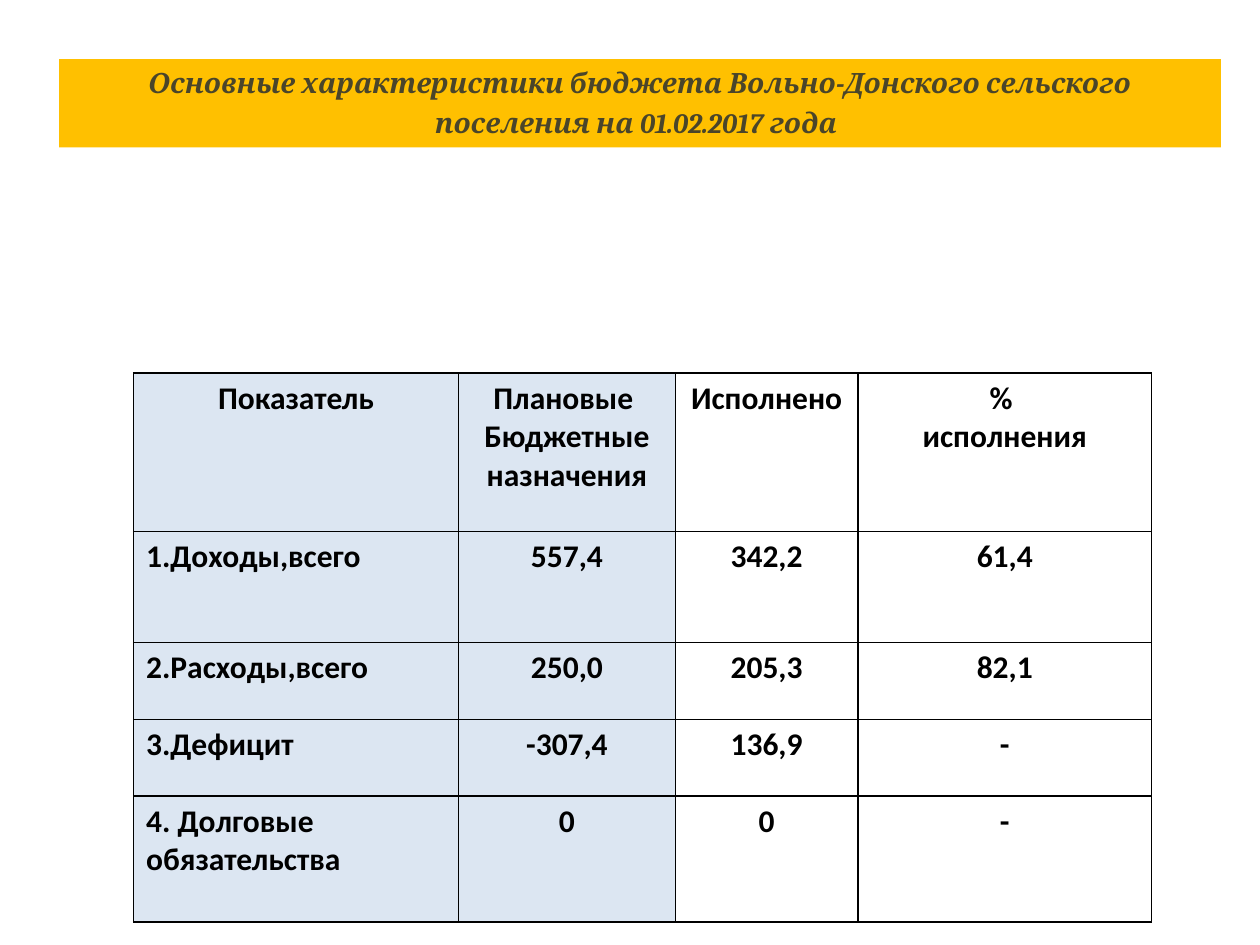
from lxml import etree
from pptx import Presentation
from pptx.dml.color import RGBColor
from pptx.enum.text import MSO_ANCHOR as Anchor, PP_ALIGN as Align
from pptx.enum.shapes import MSO_SHAPE as Shape
from pptx.oxml.ns import qn
from pptx.util import Inches, Pt

GOLD = RGBColor(0xFF, 0xC0, 0x00)
OLIVE = RGBColor(0x4A, 0x45, 0x2A)
PALE_BLUE = RGBColor(0xDC, 0xE6, 0xF2)
BLACK = RGBColor(0, 0, 0)

COLUMN_WIDTHS = [2.58, 1.72, 1.45, 2.33]
ROW_HEIGHTS = [1.26, 0.88, 0.61, 0.61, 1.0]
BUDGET = [
    ["Показатель", "Плановые \nБюджетные назначения", "Исполнено", "% \nисполнения"],
    ["1.Доходы,всего", "557,4", "342,2", "61,4"],
    ["2.Расходы,всего", "250,0", "205,3", "82,1"],
    ["3.Дефицит", "-307,4", "136,9", "-"],
    ["4. Долговые обязательства", "0", "0", "-"],
]


def add_span(para, text, size=18, font="Calibri", color=BLACK, bold=True, italic=False):
    span = para.add_run()
    span.text = text
    span.font.size = Pt(size)
    span.font.name = font
    span.font.color.rgb = color
    span.font.bold = bold
    span.font.italic = italic


class BudgetSlide:
    def __init__(self, page):
        self.page = page
        self.title_style = dict(font="Cambria", color=OLIVE, italic=True)
        self.shaded_columns = 2

    def banner(self, text, left, top, width, height):
        box = self.page.shapes.add_shape(
            Shape.RECTANGLE, Inches(left), Inches(top), Inches(width), Inches(height))
        box.shadow.inherit = False
        box.fill.solid()
        box.fill.fore_color.rgb = GOLD
        box.line.fill.background()
        frame = box.text_frame
        frame.word_wrap = True
        frame.vertical_anchor = Anchor.TOP
        para = frame.paragraphs[0]
        para.alignment = Align.CENTER
        add_span(para, text, size=16, **self.title_style)
        add_span(para, " ", size=20, **self.title_style)

    def table(self, rows, left, top, widths, heights):
        table = self.page.shapes.add_table(
            len(rows), len(widths), Inches(left), Inches(top),
            Inches(sum(widths)), Inches(sum(heights))).table
        table.first_row = False
        table.horz_banding = False
        for column, width in zip(table.columns, widths):
            column.width = Inches(width)
        for row, height in zip(table.rows, heights):
            row.height = Inches(height)
        for r, texts in enumerate(rows):
            for c, text in enumerate(texts):
                centred = r == 0 or c > 0
                self.cell(table.cell(r, c), text, centred, c < self.shaded_columns)

    def cell(self, cell, text, centred, shaded):
        for index, line in enumerate(text.split("\n")):
            frame = cell.text_frame
            para = frame.add_paragraph() if index else frame.paragraphs[0]
            para.alignment = Align.CENTER if centred else Align.LEFT
            add_span(para, line)
        self.borders(cell)
        if shaded:
            cell.fill.solid()
            cell.fill.fore_color.rgb = PALE_BLUE
        else:
            cell.fill.background()

    def borders(self, cell):
        properties = cell._tc.get_or_add_tcPr()
        for side in ("a:lnL", "a:lnR", "a:lnT", "a:lnB"):
            line = etree.SubElement(properties, qn(side), w=str(Pt(1)))
            fill = etree.SubElement(line, qn("a:solidFill"))
            etree.SubElement(fill, qn("a:srgbClr"), val=str(BLACK))


def main():
    deck = Presentation()
    deck.slide_width, deck.slide_height = Inches(10), Inches(7.5)
    slide = BudgetSlide(deck.slides.add_slide(deck.slide_layouts[6]))
    slide.banner(
        "Основные характеристики бюджета Вольно-Донского сельского "
        "поселения на 01.02.2017 года", 0.47, 0.47, 9.22, 0.7)
    slide.table(BUDGET, 1.06, 2.96, COLUMN_WIDTHS, ROW_HEIGHTS)
    deck.save("out.pptx")


if __name__ == "__main__":
    main()
